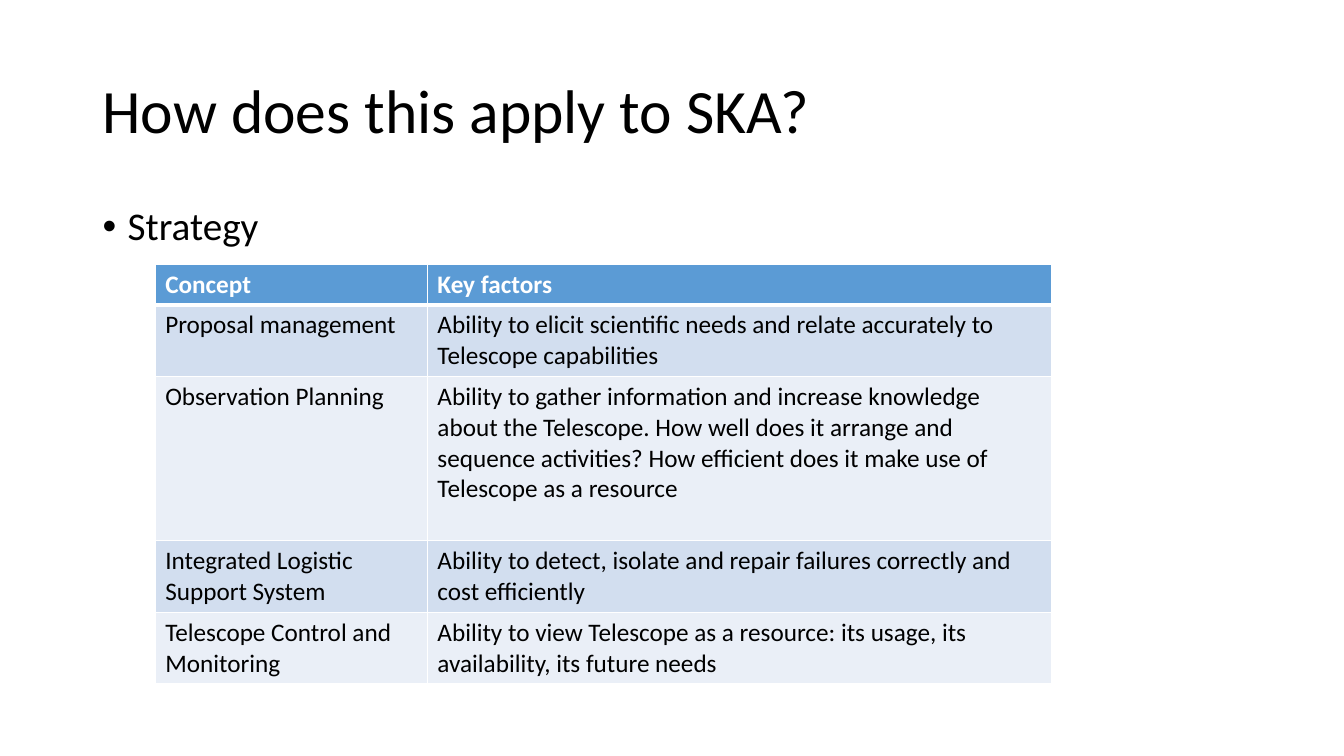
from lxml import etree
from pptx import Presentation
from pptx import util as u
from pptx.dml.color import RGBColor
from pptx.enum import text
from pptx.oxml import ns

BLACK = RGBColor(0x00, 0x00, 0x00)
WHITE = RGBColor(0xFF, 0xFF, 0xFF)
HEADER_BLUE = RGBColor(0x5B, 0x9B, 0xD5)
BAND_DARK = RGBColor(0xD2, 0xDE, 0xEF)
BAND_LIGHT = RGBColor(0xEA, 0xEF, 0xF7)

CONCEPTS = [
    ("Concept", "Key factors"),
    ("Proposal management",
     "Ability to elicit scientific needs and relate accurately to Telescope capabilities"),
    ("Observation Planning",
     "Ability to gather information and increase knowledge about the Telescope. "
     "How well does it arrange and sequence activities? "
     "How efficient does it make use of Telescope as a resource"),
    ("Integrated Logistic Support System",
     "Ability to detect, isolate and repair failures correctly and cost efficiently"),
    ("Telescope Control and Monitoring",
     "Ability to view Telescope as a resource: its usage, its availability, its future needs"),
]


class Deck:
    """Holds the style and the current slide; lengths are percentages of the slide."""

    font = "Calibri"
    title_size, list_size, table_size = 44, 28, 18

    def __init__(self, width, height):
        self.show = Presentation()
        self.show.slide_width, self.show.slide_height = u.Inches(width), u.Inches(height)
        self.slide = self.show.slides.add_slide(self.show.slide_layouts[1])

    def across(self, percent):
        return int(self.show.slide_width * percent / 100)

    def down(self, percent):
        return int(self.show.slide_height * percent / 100)

    def place(self, holder, left, top, width, height):
        holder.left, holder.top = self.across(left), self.down(top)
        holder.width, holder.height = self.across(width), self.down(height)

    def style(self, paragraph, size, color=BLACK, bold=False):
        paragraph.alignment = text.PP_ALIGN.LEFT
        for run in paragraph.runs:
            run.font.name, run.font.size = self.font, u.Pt(size)
            run.font.color.rgb, run.font.bold = color, bold

    def title(self, wording, *box):
        heading = self.slide.shapes.title
        self.place(heading, *box)
        heading.text_frame.text = wording
        heading.text_frame.vertical_anchor = text.MSO_ANCHOR.MIDDLE
        line = heading.text_frame.paragraphs[0]
        line.line_spacing = 0.9
        self.style(line, self.title_size)

    def bullets(self, wording, *box):
        body = self.slide.placeholders[1]
        self.place(body, *box)
        body.text_frame.text = wording
        for point in body.text_frame.paragraphs:
            point.line_spacing, point.space_before = 0.9, u.Pt(10)
            self.style(point, self.list_size)
            properties = point._p.get_or_add_pPr()
            properties.set("marL", str(u.Inches(0.25)))
            properties.set("indent", str(-u.Inches(0.25)))
            etree.SubElement(properties, ns.qn("a:buFont"), typeface="Arial")
            etree.SubElement(properties, ns.qn("a:buChar"), char="•")

    def borders(self, cell, **widths):
        """Draw white cell borders; widths in points, keyed L, R, T, B in that order."""
        properties = cell._tc.get_or_add_tcPr()
        for position, (side, points) in enumerate(widths.items()):
            edge = etree.Element(ns.qn(f"a:ln{side}"), w=str(u.Pt(points)))
            fill = etree.SubElement(edge, ns.qn("a:solidFill"))
            etree.SubElement(fill, ns.qn("a:srgbClr"), val=str(WHITE))
            properties.insert(position, edge)

    def table(self, rows, left, top, columns, heights):
        grid = self.slide.shapes.add_table(
            len(rows), len(columns), self.across(left), self.down(top),
            self.across(sum(columns)), self.down(sum(heights))).table
        for column, width in zip(grid.columns, columns):
            column.width = self.across(width)
        for number, (row, height) in enumerate(zip(grid.rows, heights)):
            row.height = self.down(height)
            header = number == 0
            shade = HEADER_BLUE if header else BAND_DARK if number % 2 else BAND_LIGHT
            for cell, wording in zip(row.cells, rows[number]):
                cell.text_frame.text = wording
                self.style(cell.text_frame.paragraphs[0], self.table_size,
                           WHITE if header else BLACK, header)
                cell.fill.solid()
                cell.fill.fore_color.rgb = shade
                self.borders(cell, L=1, R=1, T=3 if number == 1 else 1, B=3 if header else 1)


def main():
    deck = Deck(13.33, 7.5)
    margin, content_width = 6.88, 86.25
    deck.title("How does this apply to SKA?", margin, 5.33, content_width, 19.33)
    deck.bullets("Strategy", margin, 26.67, content_width, 63.47)
    two_lines = 9.47
    deck.table(CONCEPTS, 11.55, 34.93, columns=(20.25, 46.44),
               heights=(5.4, two_lines, 21.73, two_lines, two_lines))
    deck.show.save("out.pptx")


if __name__ == "__main__":
    main()
